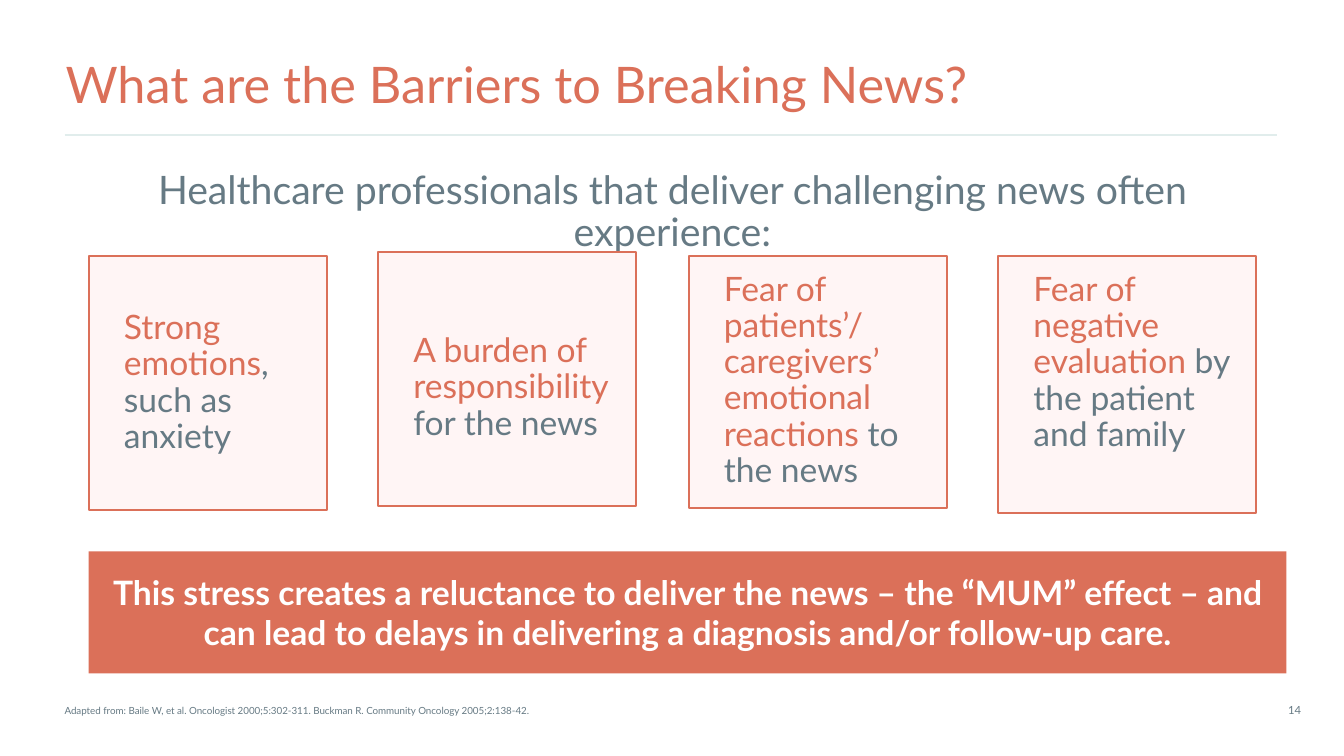
"""Build the slide on barriers to breaking news."""
from dataclasses import dataclass

from lxml.etree import SubElement
from pptx import Presentation
from pptx.dml.color import RGBColor
from pptx.enum.shapes import MSO_CONNECTOR as Connector, MSO_SHAPE as Shape
from pptx.enum.text import MSO_ANCHOR as Anchor, MSO_AUTO_SIZE as AutoSize, PP_ALIGN as Align
from pptx.oxml.ns import qn
from pptx.util import Inches, Pt

CORAL, SLATE, BLUSH, WHITE, MIST = "DB7059", "667A84", "FFF5F5", "FFFFFF", "E1EDEC"


@dataclass
class Span:
    text: str
    color: str = SLATE


@dataclass
class TextStyle:
    size: float
    align: Align = Align.LEFT
    anchor: Anchor = Anchor.TOP
    spacing: float = 0.9
    bold: bool = False
    insets: tuple[float, float, float, float] = (0, 0, 0, 0)
    wrap: bool = True


@dataclass
class Barrier:
    left: float
    top: float
    width: float
    height: float
    text_inset: float
    spans: list[Span]


BARRIERS = [
    Barrier(0.88, 2.54, 2.36, 2.52, 0.54,
            [Span("Strong emotions", CORAL), Span(", such as anxiety")]),
    Barrier(3.75, 2.5, 2.56, 2.52, 0.81,
            [Span("A burden of responsibility ", CORAL), Span("for the news")]),
    Barrier(6.83, 2.54, 2.56, 2.5, 0.16,
            [Span("Fear of patients’/\ncaregivers’ emotional reactions ", CORAL),
             Span("to \nthe news")]),
    Barrier(9.9, 2.54, 2.56, 2.55, 0.16,
            [Span("Fear of negative evaluation ", CORAL), Span("by the patient and family")]),
]


def rgb(color: str) -> RGBColor:
    """Turn a hex string into a colour."""
    return RGBColor.from_string(color)


def write(shape, spans: list[Span], style: TextStyle) -> None:
    """Fill a shape with one formatted paragraph."""
    frame = shape.text_frame
    frame.auto_size = AutoSize.NONE
    frame.word_wrap = style.wrap
    frame.vertical_anchor = style.anchor
    (frame.margin_left, frame.margin_top,
     frame.margin_right, frame.margin_bottom) = map(Inches, style.insets)
    para = frame.paragraphs[0]
    para.alignment = style.align
    para.line_spacing = style.spacing
    para.space_before = Pt(0)
    for span in spans:
        for index, text in enumerate(span.text.split("\n")):
            if index:
                para.add_line_break()
            run = para.add_run()
            run.text = text
            run.font.name = "Lato"
            run.font.size = Pt(style.size)
            run.font.bold = style.bold
            run.font.color.rgb = rgb(span.color)


def fill_placeholder(shape, area: tuple[float, float, float, float],
                     span: Span, style: TextStyle) -> None:
    """Move a placeholder, write its text and remove its bullet."""
    shape.left, shape.top, shape.width, shape.height = map(Inches, area)
    properties = shape.text_frame.paragraphs[0]._p.get_or_add_pPr()
    properties.set("marL", "0")
    properties.set("indent", "0")
    SubElement(properties, qn("a:buNone"))
    write(shape, [span], style)


def add_panel(page, area: tuple[float, float, float, float], fill: str,
              spans: list[Span], style: TextStyle, outline: str | None = None) -> None:
    """Draw a filled rectangle with text."""
    panel = page.shapes.add_shape(Shape.RECTANGLE, *map(Inches, area))
    panel.shadow.inherit = False
    panel.fill.solid()
    panel.fill.fore_color.rgb = rgb(fill)
    if outline:
        panel.line.color.rgb = rgb(outline)
        panel.line.width = Pt(1.5)
    else:
        panel.line.fill.background()
    write(panel, spans, style)


def add_rule(page) -> None:
    """Draw the line below the title."""
    rule = page.shapes.add_connector(
        Connector.STRAIGHT, Inches(0.64), Inches(1.34), Inches(12.67), Inches(1.34))
    rule.line.color.rgb = rgb(MIST)
    rule.line.width = Pt(1.5)
    SubElement(rule._element.spPr, qn("a:effectLst"))


def main() -> None:
    """Build and save the deck."""
    deck = Presentation()
    deck.slide_width, deck.slide_height = Inches(13.33), Inches(7.5)
    page = deck.slides.add_slide(deck.slide_layouts.get_by_name("Two Content"))
    title, lead, citation = page.placeholders
    fill_placeholder(title, (0.65, 0.59, 12.03, 0.55),
                     Span("What are the Barriers to Breaking News?", CORAL),
                     TextStyle(36, anchor=Anchor.MIDDLE))
    fill_placeholder(lead, (0.58, 1.69, 12.18, 0.85),
                     Span("Healthcare professionals that deliver challenging news "
                          "often experience:"),
                     TextStyle(28, Align.CENTER))
    fill_placeholder(citation, (0.64, 7, 11.13, 0.11),
                     Span("Adapted from: Baile W, et al. Oncologist 2000;5:302-311. "
                          "Buckman R. Community Oncology 2005;2:138-42."),
                     TextStyle(7, anchor=Anchor.BOTTOM))
    add_rule(page)
    for barrier in BARRIERS:
        add_panel(page, (barrier.left, barrier.top, barrier.width, barrier.height),
                  BLUSH, barrier.spans,
                  TextStyle(24, insets=(0.35, barrier.text_inset, 0.16, 0.16)), CORAL)
    add_panel(page, (0.88, 5.47, 11.88, 1.21), CORAL,
              [Span("This stress creates a reluctance to deliver the news – the “MUM” "
                    "effect – and can lead to delays in delivering a diagnosis and/or "
                    "follow-up care.", WHITE)],
              TextStyle(24, Align.CENTER, spacing=1, bold=True, insets=(0.2,) * 4))
    number = page.shapes.add_textbox(*map(Inches, (12.67, 6.93, 0.34, 0.24)))
    write(number, [Span("14")],
          TextStyle(8, Align.CENTER, spacing=1, insets=(0.1, 0.05, 0.1, 0.05), wrap=False))
    deck.save("out.pptx")


if __name__ == "__main__":
    main()
